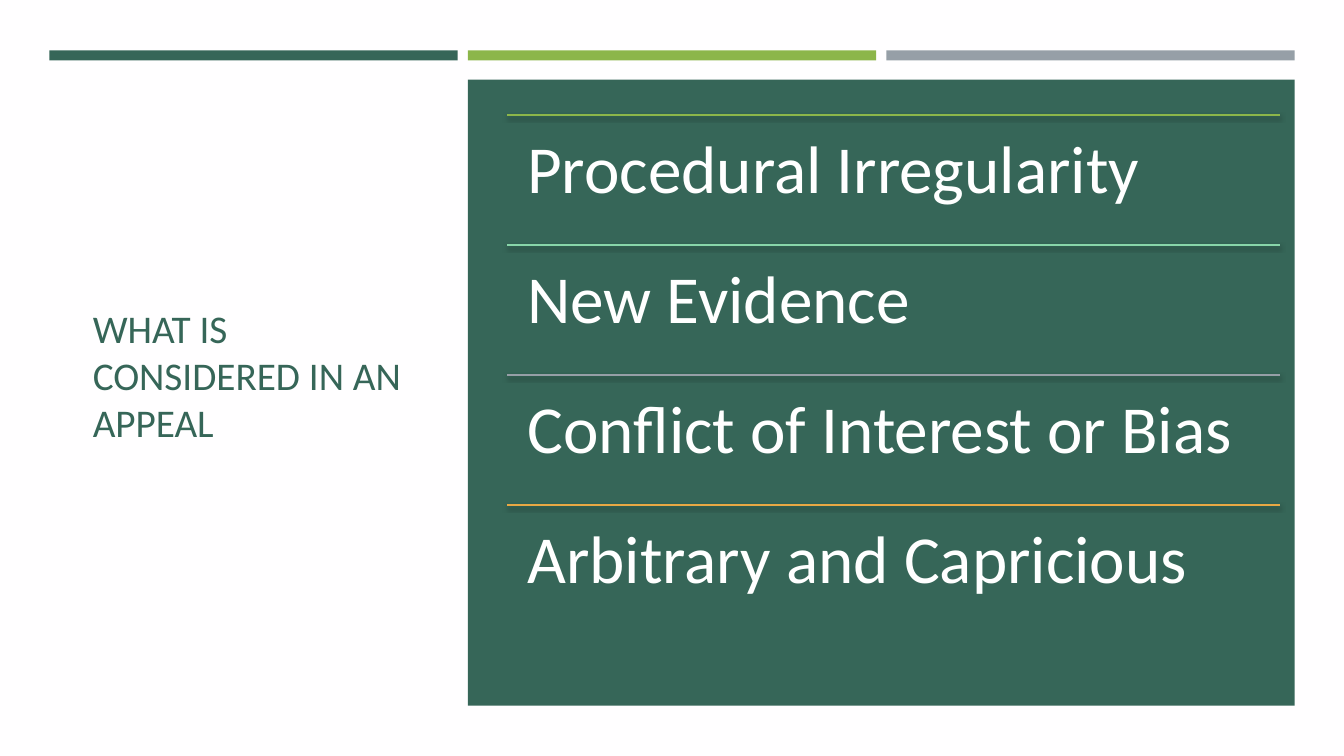
from dataclasses import dataclass

from lxml.etree import SubElement
from pptx import Presentation
from pptx.dml.color import RGBColor
from pptx.enum.shapes import MSO_CONNECTOR, MSO_SHAPE
from pptx.enum.text import MSO_ANCHOR, MSO_AUTO_SIZE, PP_ALIGN
from pptx.oxml.ns import qn
from pptx.util import Inches, Pt


@dataclass(frozen=True)
class Theme:
    font: str = "Calibri"
    paper: str = "FFFEFF"
    white: str = "FFFFFF"
    black: str = "000000"
    green: str = "366658"
    lime: str = "8CB64A"
    mint: str = "88D5A9"
    gray: str = "969FA7"
    amber: str = "E8A844"
    head: int = 28
    item: int = 48


class Deck:
    def __init__(self, theme):
        self.theme = theme
        self.file = Presentation()
        self.file.slide_width = Inches(13.33)
        self.file.slide_height = Inches(7.5)
        self.slide = self.file.slides.add_slide(self.file.slide_layouts[5])
        self.paint(self.slide.background.fill, theme.paper)

    def paint(self, fill, color):
        fill.solid()
        fill.fore_color.rgb = RGBColor.from_string(color)

    def style(self, para, size, color):
        para.alignment = PP_ALIGN.LEFT
        para.font.name = self.theme.font
        para.font.size = Pt(size)
        para.font.color.rgb = RGBColor.from_string(color)

    def title(self, text, left, top, width, height):
        shape = self.slide.shapes.title
        shape.left, shape.top = Inches(left), Inches(top)
        shape.width, shape.height = Inches(width), Inches(height)
        frame = shape.text_frame
        frame.text = text
        frame.word_wrap = True
        frame.auto_size = MSO_AUTO_SIZE.NONE
        frame.vertical_anchor = MSO_ANCHOR.MIDDLE
        self.style(frame.paragraphs[0], self.theme.head, self.theme.green)

    def block(self, color, left, top, width, height):
        shape = self.slide.shapes.add_shape(
            MSO_SHAPE.RECTANGLE, Inches(left), Inches(top), Inches(width), Inches(height))
        shape.shadow.inherit = False
        self.paint(shape.fill, color)
        shape.line.fill.background()

    def rule(self, color, left, top, width):
        line = self.slide.shapes.add_connector(
            MSO_CONNECTOR.STRAIGHT, Inches(left), Inches(top), Inches(left + width), Inches(top))
        line.line.color.rgb = RGBColor.from_string(color)
        line.line.width = Pt(1)
        effects = SubElement(line._element.spPr, qn("a:effectLst"))
        shadow = SubElement(effects, qn("a:outerShdw"), blurRad=str(Pt(3)),
                            dist=str(Pt(2)), dir="5400000", rotWithShape="0")
        tint = SubElement(shadow, qn("a:srgbClr"), val=self.theme.black)
        SubElement(tint, qn("a:alpha"), val="55000")

    def item(self, text, left, top, width, height):
        frame = self.slide.shapes.add_textbox(
            Inches(left), Inches(top), Inches(width), Inches(height)).text_frame
        frame.word_wrap = True
        frame.margin_left = frame.margin_right = Inches(0.2)
        frame.margin_top = frame.margin_bottom = Inches(0.2)
        frame.text = text
        para = frame.paragraphs[0]
        para.line_spacing = 0.9
        self.style(para, self.theme.item, self.theme.white)


def main():
    theme = Theme()
    deck = Deck(theme)
    deck.title("WHAT IS CONSIDERED IN AN APPEAL", 0.82, 1.14, 3.34, 5.15)

    for col, color in enumerate((theme.green, theme.lime, theme.gray)):
        deck.block(color, 0.49 + col * 4.15, 0.5, 4.05, 0.1)
    deck.block(theme.green, 4.64, 0.79, 8.2, 6.21)

    grounds = (
        ("Procedural Irregularity", theme.lime),
        ("New Evidence", theme.mint),
        ("Conflict of Interest or Bias", theme.gray),
        ("Arbitrary and Capricious", theme.amber),
    )
    left, width, pitch = 5.03, 7.67, 1.29
    for row, (text, color) in enumerate(grounds):
        top = 1.14 + row * pitch
        deck.rule(color, left, top, width)
        deck.item(text, left, top, width, pitch)

    deck.file.save("out.pptx")


if __name__ == "__main__":
    main()
